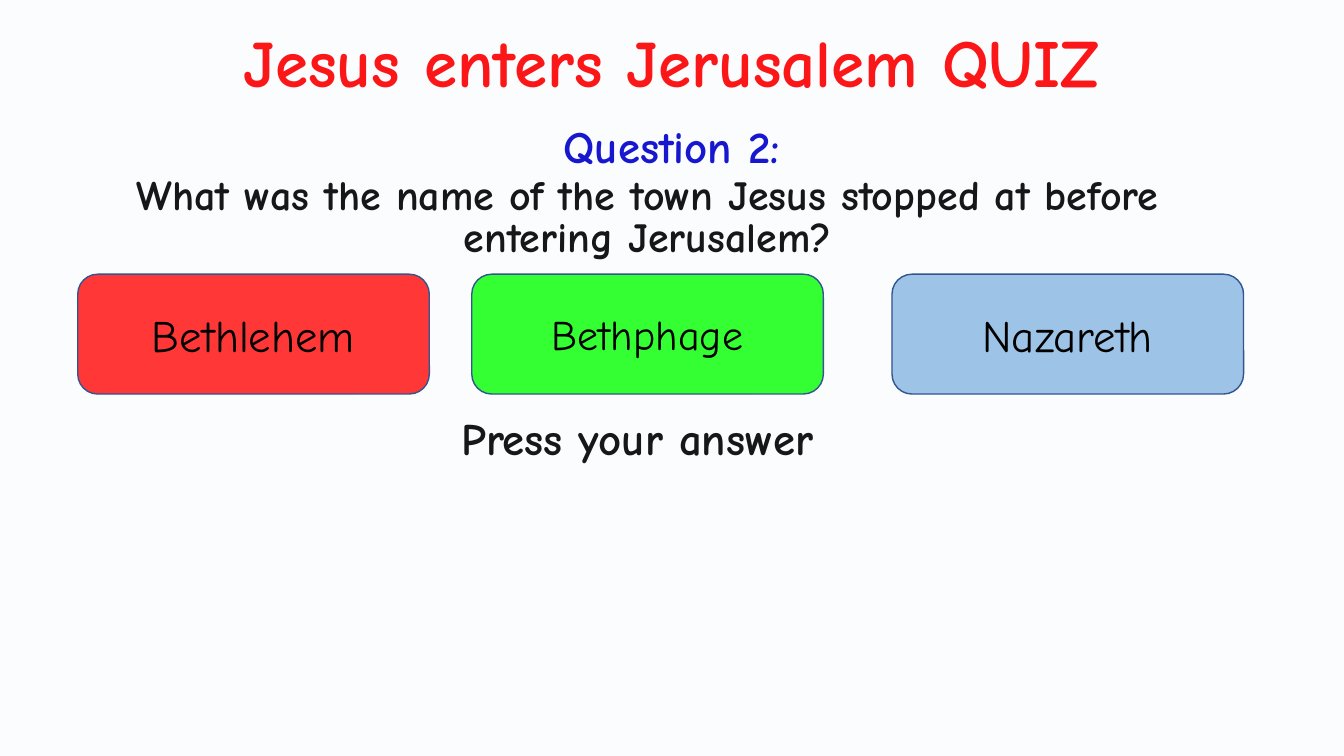
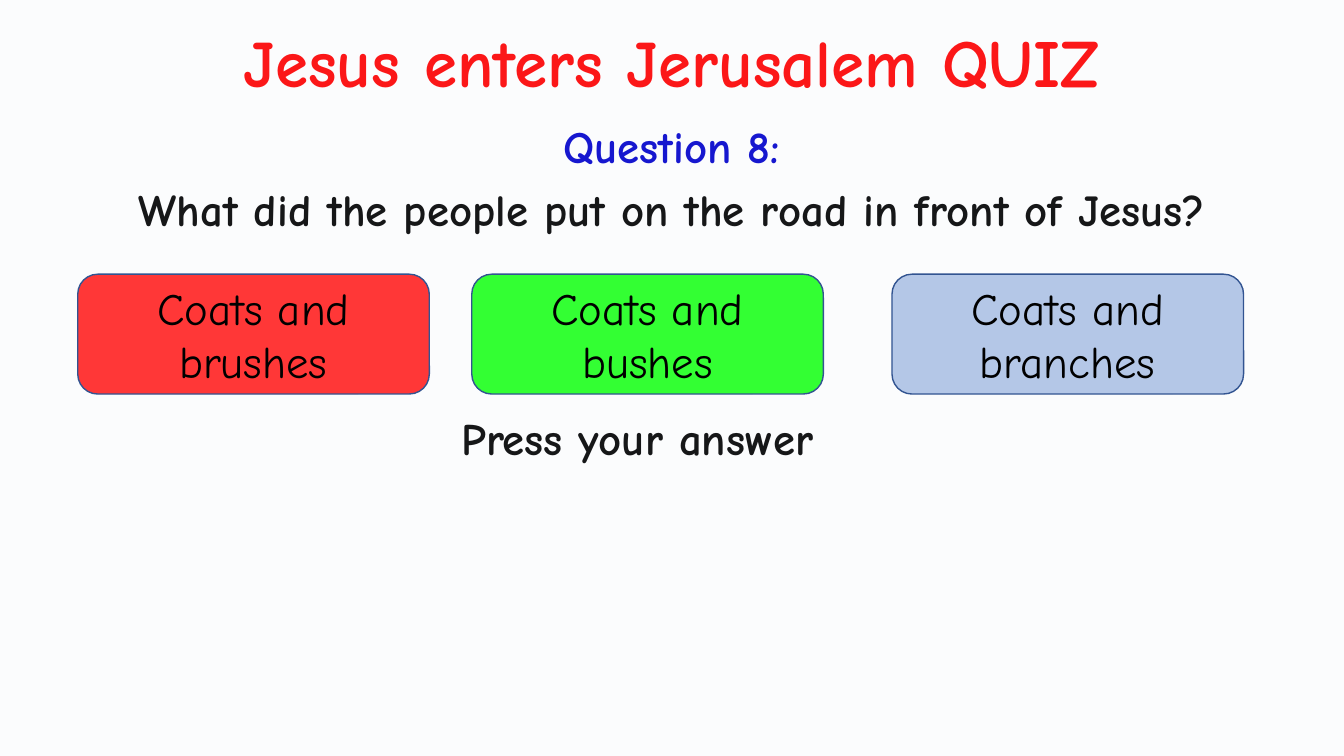
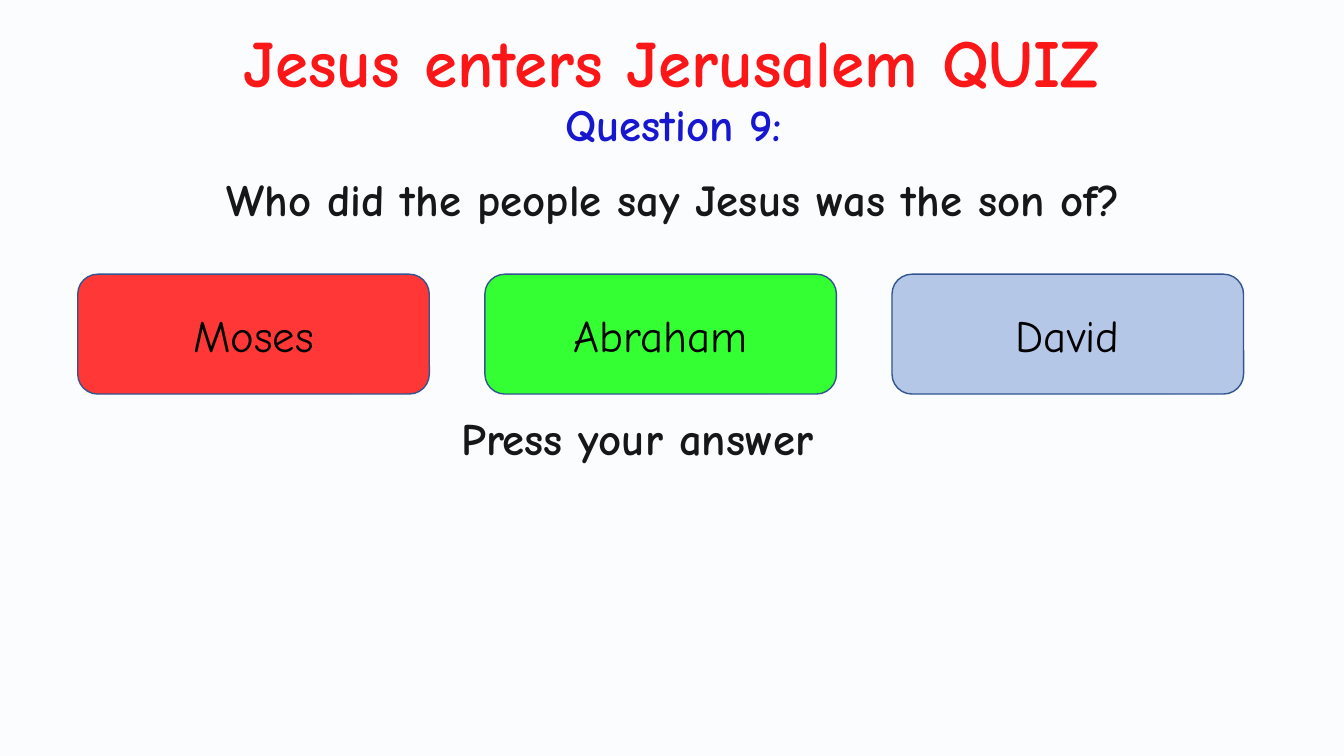
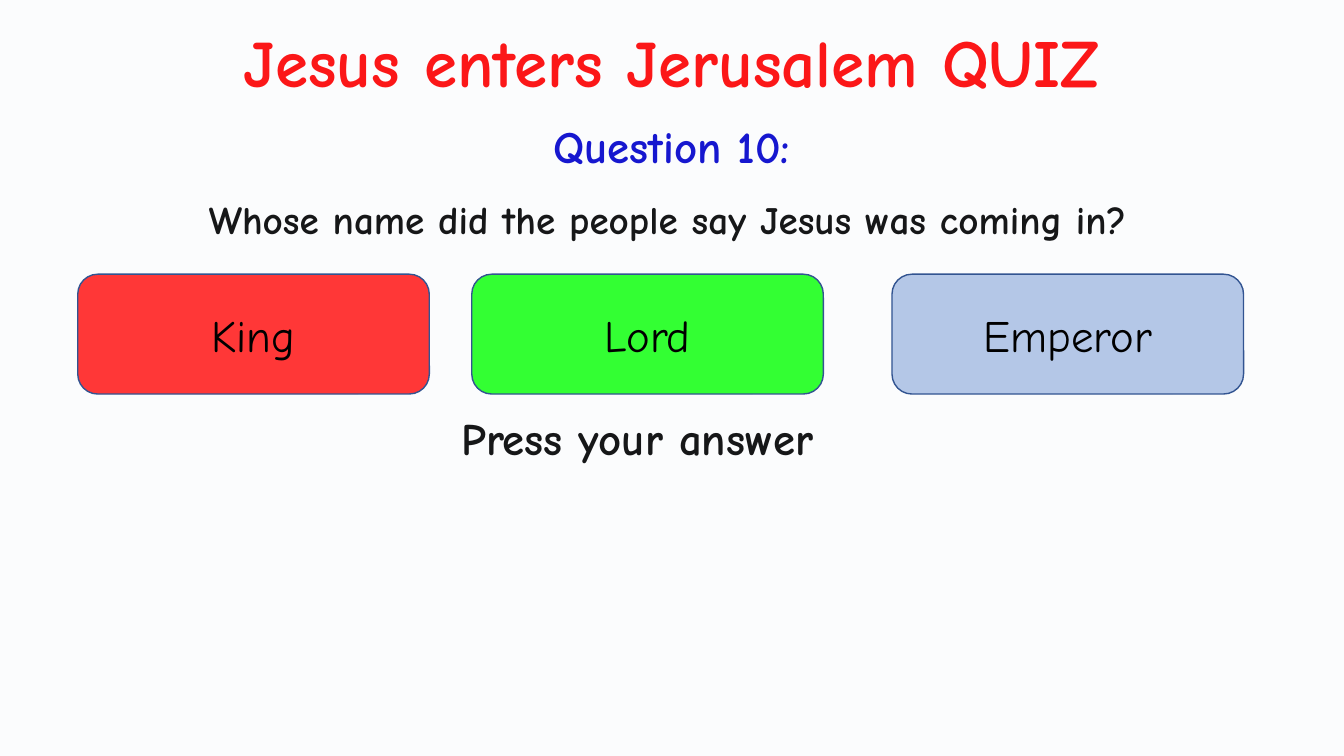
"""Build four slides of a multiple-choice quiz about Jesus entering Jerusalem."""
from lxml import etree
from pptx import Presentation
from pptx import util as u
from pptx.dml.color import RGBColor
from pptx.enum import shapes, text
from pptx.oxml.ns import qn

HEADING = "Jesus enters Jerusalem QUIZ"
PROMPT = "Press your answer"
QUESTIONS = [
    {
        "label": "Question 2:",
        "question": "What was the name of the town Jesus stopped at before entering Jerusalem?",
        "question_box": (1.63, 4.34, 29.39, 3.02),
        "question_format": {"size": u.Pt(30), "line_spacing": u.Pt(30)},
        "answers": ["Bethlehem", "Bethphage", "Nazareth"],
        "answer_sizes": [32, 30, 32],
        "third_fill": "sky",
    },
    {
        "label": "Question 8:",
        "question": "What did the people put on the road in front of Jesus?",
        "question_box": (0.79, 4.55, 32.31, 3.02),
        "question_format": {"size": u.Pt(32), "line_spacing": u.Pt(36)},
        "answers": ["Coats and brushes", "Coats and bushes", "Coats and branches"],
    },
    {
        "label": "Question 9:",
        "label_box": (11.38, 2.31, 11.2, 1.63),
        "question": "Who did the people say Jesus was the son of?",
        "question_box": (2.29, 4.24, 29.39, 3.02),
        "question_format": {"size": u.Pt(32), "line_spacing": u.Pt(37)},
        "answers": ["Moses", "Abraham", "David"],
        "middle_left": 12.22,
    },
    {
        "label": "Question 10:",
        "question": "Whose name did the people say Jesus was coming in?",
        "question_box": (1.6, 4.72, 30.45, 2.18),
        "question_format": {"size": u.Pt(28), "line_spacing": u.Pt(36)},
        "answers": ["King", "Lord", "Emperor"],
    },
]

THEME = {
    "font": "Comic Neue",
    "colours": {
        "heading": "FF0000", "label": "0000CC", "ink": "000000",
        "veil": "DAE3F3", "edge": "325491",
        "red": "FF3737", "green": "33FF33", "sky": "9DC3E6", "blue": "B4C7E7",
    },
    "styles": {
        "heading": {"size": u.Pt(48), "bold": True, "colour": "heading"},
        "label": {"size": u.Pt(32), "bold": True, "colour": "label"},
        "question": {"bold": True, "space_before": u.Pt(10)},
        "prompt": {"size": u.Pt(32), "bold": True, "line_spacing": 0.9,
                   "space_before": u.Pt(7.5), "alignment": text.PP_ALIGN.LEFT},
        "answer": {"size": u.Pt(32), "bold": False},
    },
}
SLIDE_SIZE = (33.87, 19.05)
HEADING_BOX = (3.99, 0.38, 25.88, 2.31)
LABEL_BOX = (11.33, 2.87, 11.2, 1.63)
PROMPT_BOX = (11.38, 10.39, 17.09, 1.83)
ANSWER_LEFTS = (1.96, 11.89, 22.48)
ANSWER_TOP, ANSWER_WIDTH, ANSWER_HEIGHT = 6.91, 8.86, 3.02


def colour(name):
    return RGBColor.from_string(THEME["colours"][name])


def cm(box):
    return [u.Cm(length) for length in box]


def write(frame, wording, style, **changes):
    values = {"alignment": text.PP_ALIGN.CENTER, "colour": "ink",
              **THEME["styles"][style], **changes}
    frame.word_wrap = True
    paragraph = frame.paragraphs[0]
    run = paragraph.add_run()
    run.text = wording
    run.font.name = THEME["font"]
    run.font.color.rgb = colour(values.pop("colour"))
    for attribute, value in values.items():
        target = run.font if attribute in ("size", "bold") else paragraph
        setattr(target, attribute, value)


def add_words(slide, box, wording, style, **changes):
    write(slide.shapes.add_textbox(*cm(box)).text_frame, wording, style, **changes)


def add_panel(slide, preset, box, fill):
    panel = slide.shapes.add_shape(preset, *cm(box))
    panel.shadow.inherit = False
    panel.fill.solid()
    panel.fill.fore_color.rgb = colour(fill)
    return panel


def add_veil(slide):
    veil = add_panel(slide, shapes.MSO_SHAPE.RECTANGLE, (0, 0, *SLIDE_SIZE), "veil")
    veil.line.fill.background()
    tint = veil.fill._xPr.find(qn("a:solidFill"))[0]
    etree.SubElement(tint, qn("a:alpha"), val="10000")


def add_answer(slide, left, wording, fill, size):
    box = (left, ANSWER_TOP, ANSWER_WIDTH, ANSWER_HEIGHT)
    button = add_panel(slide, shapes.MSO_SHAPE.ROUNDED_RECTANGLE, box, fill)
    button.line.color.rgb = colour("edge")
    button.line.width = u.Pt(1)
    button.text_frame.vertical_anchor = text.MSO_ANCHOR.MIDDLE
    write(button.text_frame, wording, "answer", size=u.Pt(size))


def add_question(deck, item):
    slide = deck.slides.add_slide(deck.slide_layouts[6])
    add_words(slide, HEADING_BOX, HEADING, "heading")
    add_words(slide, item["question_box"], item["question"], "question",
              **item["question_format"])
    add_words(slide, PROMPT_BOX, PROMPT, "prompt")
    add_words(slide, item.get("label_box", LABEL_BOX), item["label"], "label")
    add_veil(slide)
    first, middle, last = ANSWER_LEFTS
    lefts = (first, item.get("middle_left", middle), last)
    fills = ("red", "green", item.get("third_fill", "blue"))
    sizes = item.get("answer_sizes", [32] * 3)
    for left, wording, fill, size in zip(lefts, item["answers"], fills, sizes):
        add_answer(slide, left, wording, fill, size)


def main():
    deck = Presentation()
    deck.slide_width, deck.slide_height = cm(SLIDE_SIZE)
    for item in QUESTIONS:
        add_question(deck, item)
    deck.save("out.pptx")


if __name__ == "__main__":
    main()
